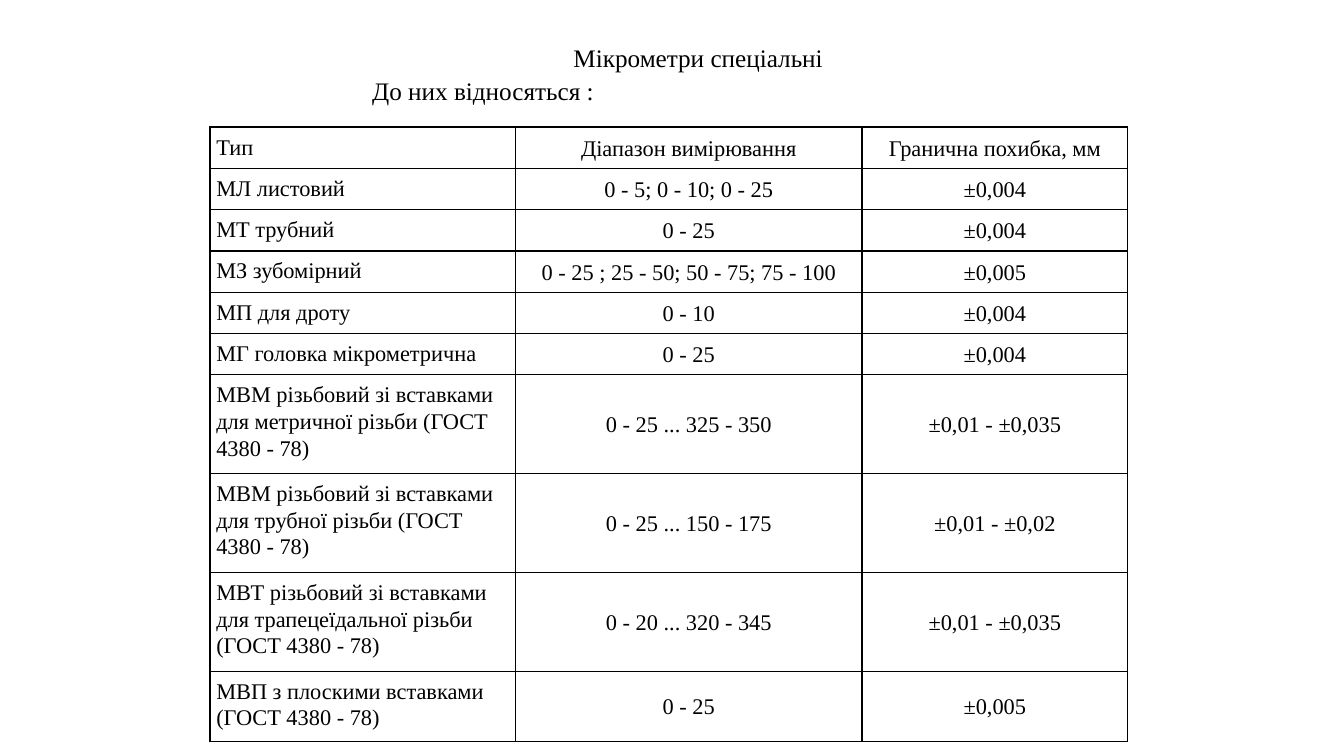
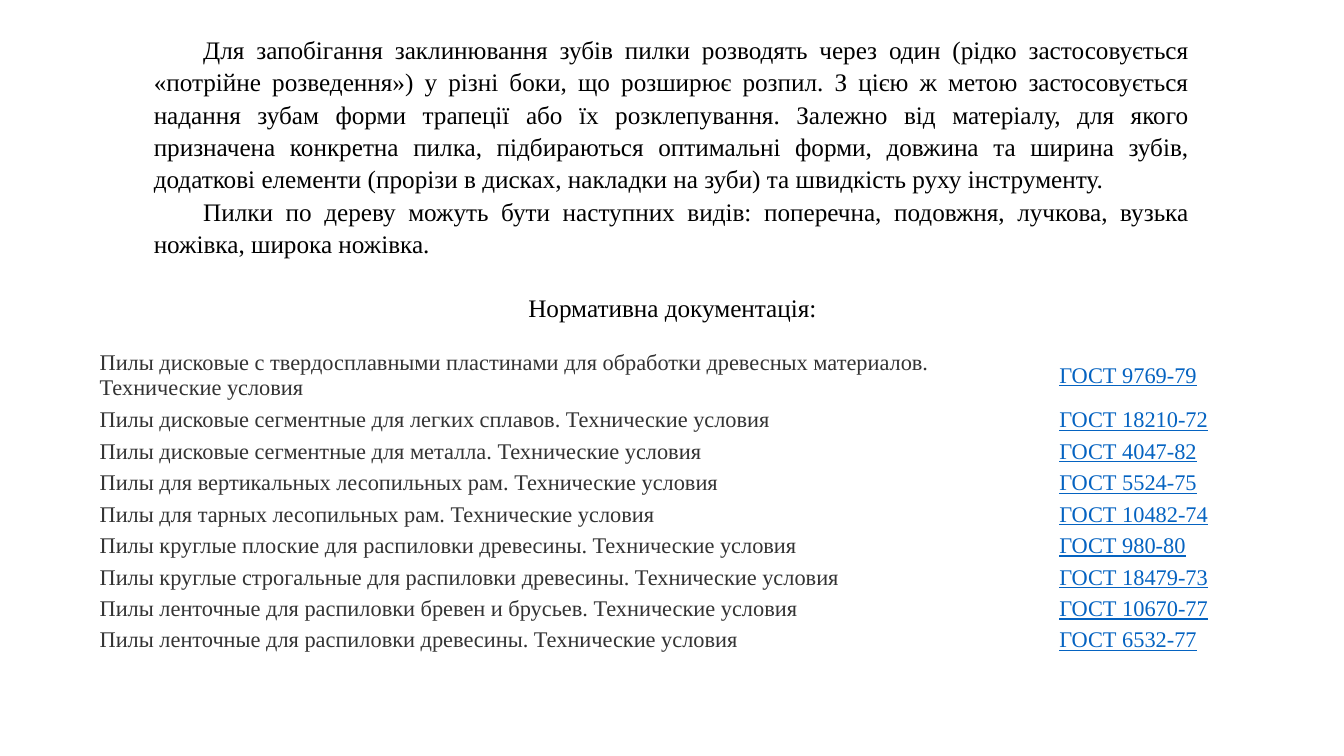
from lxml import etree
from pptx import Presentation
from pptx.dml.color import RGBColor
from pptx.enum.text import MSO_ANCHOR as Anchor, PP_ALIGN as Align
from pptx.oxml.ns import qn
from pptx.util import Emu, Pt

# Shared look
COLORS = {"text": "000000", "muted": "333333", "link": "0563C1", "border": "000000"}
FONT = "Times New Roman"
BODY_SIZE, TABLE_SIZE = 18, 16
LOOSE = 1.07  # line spacing


def px(value):
    return Emu(value * 9525)


# Slide 1 content: type, range, error, lines of text in the row
MICROMETERS_TITLE = "Мікрометри спеціальні"
MICROMETERS_INTRO = "До них відносяться :"
MICROMETERS = [
    ("Тип", "Діапазон вимірювання", "Гранична похибка, мм", 1),
    ("МЛ листовий", "0 - 5; 0 - 10; 0 - 25", "±0,004", 1),
    ("МТ трубний", "0 - 25", "±0,004", 1),
    ("МЗ зубомірний", "0 - 25 ; 25 - 50; 50 - 75; 75 - 100", "±0,005", 1),
    ("МП для дроту", "0 - 10", "±0,004", 1),
    ("МГ головка мікрометрична", "0 - 25", "±0,004", 1),
    ("МВМ різьбовий зі вставками для метричної різьби (ГОСТ 4380 - 78)",
     "0 - 25 ... 325 - 350", "±0,01 - ±0,035", 3),
    ("МВМ різьбовий зі вставками для трубної різьби (ГОСТ 4380 - 78)",
     "0 - 25 ... 150 - 175", "±0,01 - ±0,02", 3),
    ("МВТ різьбовий зі вставками для трапецеїдальної різьби (ГОСТ 4380 - 78)",
     "0 - 20 ... 320 - 345", "±0,01 - ±0,035", 3),
    ("МВП з плоскими вставками (ГОСТ 4380 - 78)", "0 - 25", "±0,005", 2),
]

# Slide 2 content: document name, standard, lines of text in the row
SAW_PARAGRAPHS = [
    "Для запобігання заклинювання зубів пилки розводять через один (рідко "
    "застосовується «потрійне розведення») у різні боки, що розширює розпил. "
    "З цією ж метою застосовується надання зубам форми трапеції або їх "
    "розклепування. Залежно від матеріалу, для якого призначена конкретна пилка, "
    "підбираються оптимальні форми, довжина та ширина зубів, додаткові елементи "
    "(прорізи в дисках, накладки на зуби) та швидкість руху інструменту.",
    "Пилки по дереву можуть бути наступних видів: поперечна, подовжня, лучкова, "
    "вузька ножівка, широка ножівка.",
]
STANDARDS_TITLE = "Нормативна документація:"
STANDARDS = [
    ("Пилы дисковые с твердосплавными пластинами для обработки древесных "
     "материалов. Технические условия", "ГОСТ 9769-79", 2),
    ("Пилы дисковые сегментные для легких сплавов. Технические условия", "ГОСТ 18210-72", 1),
    ("Пилы дисковые сегментные для металла. Технические условия", "ГОСТ 4047-82", 1),
    ("Пилы для вертикальных лесопильных рам. Технические условия", "ГОСТ 5524-75", 1),
    ("Пилы для тарных лесопильных рам. Технические условия", "ГОСТ 10482-74", 1),
    ("Пилы круглые плоские для распиловки древесины. Технические условия", "ГОСТ 980-80", 1),
    ("Пилы круглые строгальные для распиловки древесины. Технические условия",
     "ГОСТ 18479-73", 1),
    ("Пилы ленточные для распиловки бревен и брусьев. Технические условия",
     "ГОСТ 10670-77", 1),
    ("Пилы ленточные для распиловки древесины. Технические условия", "ГОСТ 6532-77", 1),
]


def write_text(paragraph, text, size=BODY_SIZE, color="text", align=Align.LEFT,
               spacing=None, indent=0, underline=None):
    paragraph.alignment = align
    if spacing:
        paragraph.line_spacing = spacing
    if indent:
        properties = paragraph._p.get_or_add_pPr()
        properties.set("marL", "0")
        properties.set("indent", str(px(indent)))
    run = paragraph.add_run()
    run.text = text
    font = run.font
    font.name, font.size, font.underline = FONT, Pt(size), underline
    font.color.rgb = RGBColor.from_string(COLORS[color])


def add_text_box(slide, box, items):
    """Each item is a text and a dict of its format."""
    frame = slide.shapes.add_textbox(*map(px, box)).text_frame
    frame.word_wrap = True
    for index, (text, style) in enumerate(items):
        paragraph = frame.add_paragraph() if index else frame.paragraphs[0]
        write_text(paragraph, text, **style)


def draw_borders(cell):
    properties = cell._tc.get_or_add_tcPr()
    for side in ("a:lnL", "a:lnR", "a:lnT", "a:lnB"):
        line = etree.SubElement(properties, qn(side), w=str(Pt(1)))
        fill = etree.SubElement(line, qn("a:solidFill"))
        etree.SubElement(fill, qn("a:srgbClr"), val=COLORS["border"])


def add_plain_table(slide, left, top, widths, rows, row_height, insets, columns,
                    borders=False):
    """columns gives the anchor and text format of each column."""
    heights = [row_height(row[-1]) for row in rows]
    table = slide.shapes.add_table(len(rows), len(widths), px(left), px(top),
                                   px(sum(widths)), px(sum(heights))).table
    table.first_row = table.horz_banding = False
    for column, width in zip(table.columns, widths):
        column.width = px(width)
    for row, height, values in zip(table.rows, heights, rows):
        row.height = px(height)
        for cell, text, (anchor, style) in zip(row.cells, values, columns):
            cell.margin_left = cell.margin_right = px(insets[0])
            cell.margin_top = cell.margin_bottom = px(insets[1])
            cell.vertical_anchor = anchor
            if borders:
                draw_borders(cell)
            cell.fill.background()
            write_text(cell.text_frame.paragraphs[0], text, size=TABLE_SIZE, **style)


def build_micrometers(slide):
    add_text_box(slide, (345, 34, 640, 70), [
        (MICROMETERS_TITLE, {"align": Align.CENTER, "spacing": LOOSE}),
        (MICROMETERS_INTRO, {"spacing": LOOSE}),
    ])
    centred = (Anchor.MIDDLE, {"align": Align.CENTER, "spacing": LOOSE})
    add_plain_table(slide, 200, 121, (291, 330, 253), MICROMETERS,
                    lambda lines: 25 * lines + 12, (6, 6),
                    [(Anchor.TOP, {"spacing": LOOSE}), centred, centred], borders=True)


def build_saws(slide):
    body = {"align": Align.JUSTIFY, "spacing": LOOSE, "indent": 47}
    add_text_box(slide, (137, 26, 1005, 287), [(text, body) for text in SAW_PARAGRAPHS])
    add_text_box(slide, (492, 274, 297, 38), [(STANDARDS_TITLE, {"align": Align.CENTER})])
    add_plain_table(slide, 88, 330, (914, 205), STANDARDS,
                    lambda lines: 23 * lines + 7, (7, 2),
                    [(Anchor.MIDDLE, {"color": "muted"}),
                     (Anchor.MIDDLE, {"color": "link", "underline": True})])


def main():
    presentation = Presentation()
    presentation.slide_width, presentation.slide_height = px(1280), px(720)
    blank = presentation.slide_layouts[6]
    for build in (build_micrometers, build_saws):
        build(presentation.slides.add_slide(blank))
    presentation.save("out.pptx")


if __name__ == "__main__":
    main()
